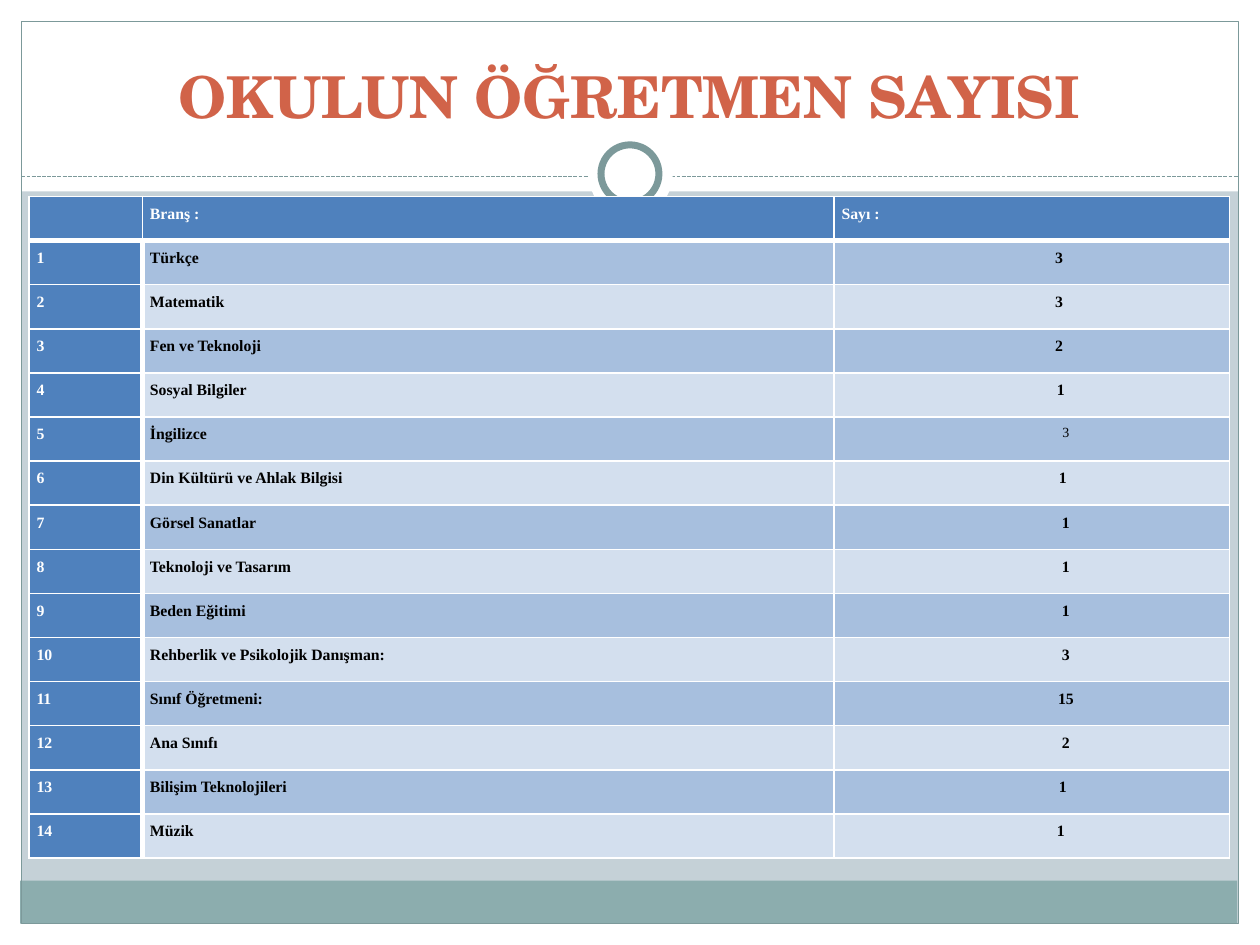
from lxml import etree
from pptx import Presentation
from pptx.dml.color import RGBColor
from pptx.enum.dml import MSO_LINE
from pptx.enum.shapes import MSO_CONNECTOR, MSO_SHAPE
from pptx.enum.text import MSO_ANCHOR, PP_ALIGN
from pptx.oxml.ns import qn
from pptx.util import Inches, Pt

RECT, OVAL = MSO_SHAPE.RECTANGLE, MSO_SHAPE.OVAL
STRAIGHT, DASH = MSO_CONNECTOR.STRAIGHT, MSO_LINE.SQUARE_DOT
LEFT, CENTER = PP_ALIGN.LEFT, PP_ALIGN.CENTER
BOTTOM = MSO_ANCHOR.BOTTOM

COLORS = {
    "back": "C5D1D7", "white": "FFFFFF", "black": "000000", "band": "8CADAE",
    "edge": "7C999A", "title": "D16349", "head": "4F81BD",
    "odd": "A7BFDE", "even": "D3DFEE",
}
STAFF = [
    ("Türkçe", 3, 0.43), ("Matematik", 3, 0.43), ("Fen ve Teknoloji", 2, 0.43),
    ("Sosyal Bilgiler", 1, 0.46), ("İngilizce", 3, 0.54),
    ("Din Kültürü ve Ahlak Bilgisi", 1, 0.49), ("Görsel Sanatlar", 1, 0.54),
    ("Teknoloji ve Tasarım", 1, 0.54), ("Beden Eğitimi", 1, 0.54),
    ("Rehberlik ve Psikolojik Danışman:", 3, 0.54),
    ("Sınıf Öğretmeni:", 15, 0.54), ("Ana Sınıfı", 2, 0.54),
    ("Bilişim Teknolojileri", 1, 0.49), ("Müzik", 1, 0.46),
]
WIDTHS = (0.9, 5.49, 3.14)
HEIGHT = 0.35


def color(name):
    """Return the named colour."""
    return RGBColor.from_string(COLORS[name])


def add_shape(slide, kind, box, fill=None, width=None):
    """Add a preset shape with an optional fill and edge."""
    shape = slide.shapes.add_shape(kind, *map(Inches, box))
    shape.shadow.inherit = False
    if fill:
        shape.fill.solid()
        shape.fill.fore_color.rgb = color(fill)
    else:
        shape.fill.background()
    if width:
        shape.line.color.rgb = color("edge")
        shape.line.width = Pt(width)
    else:
        shape.line.fill.background()


def add_rule(slide, left, right, top):
    """Add the dashed rule under the title."""
    rule = slide.shapes.add_connector(
        STRAIGHT, Inches(left), Inches(top), Inches(right), Inches(top))
    rule.line.color.rgb = color("edge")
    rule.line.width = Pt(0.75)
    rule.line.dash_style = DASH
    etree.SubElement(rule.element.spPr, qn("a:effectLst"))


def add_frame(slide):
    """Draw the margins, the bottom band, the border and the ring."""
    for box in ((0, 7.33, 10, 0.17), (0, 0, 10, 1.52),
                (0, 0, 0.17, 7.5), (9.83, 0, 0.17, 7.5)):
        add_shape(slide, RECT, box, "white")
    add_shape(slide, RECT, (0.16, 6.99, 9.66, 0.34), "band")
    add_shape(slide, RECT, (0.17, 0.17, 9.66, 7.16), width=0.75)
    add_rule(slide, 0.17, 9.83, 1.4)
    add_shape(slide, OVAL, (4.67, 1.05, 0.67, 0.67), "white")
    add_shape(slide, OVAL, (4.77, 1.15, 0.46, 0.46), "white", 4)


def set_font(font, name, size, tone, bold=True):
    """Set the face, size, colour and weight of a font."""
    font.name, font.size, font.bold = name, Pt(size), bold
    font.color.rgb = color(tone)


def set_title(slide, text):
    """Fill the title and lift it above the frame."""
    title = slide.shapes.title
    title.left, title.top = Inches(0.33), Inches(0.25)
    title.width, title.height = Inches(9.33), Inches(0.83)
    title.text_frame.text = text
    title.text_frame.vertical_anchor = BOTTOM
    para = title.text_frame.paragraphs[0]
    para.alignment = CENTER
    set_font(para.font, "TeX Gyre Schola", 33, "title")
    title.element.getparent().append(title.element)


def set_edges(cell, row, col):
    """Draw white cell borders, thick beside the header row and column."""
    thick = {"lnL": row > 0 and col == 1, "lnR": row > 0 and col == 0,
             "lnT": row == 1, "lnB": row == 0}
    props = cell._tc.get_or_add_tcPr()
    for tag, wide in thick.items():
        line = etree.SubElement(props, qn(f"a:{tag}"), w=str(Pt(3 if wide else 1)))
        fill = etree.SubElement(line, qn("a:solidFill"))
        etree.SubElement(fill, qn("a:srgbClr"), val=COLORS["white"])


def set_cell(cell, text, row, col, indent):
    """Style one cell by its place and write its text."""
    head = row == 0 or col == 0
    count = row > 0 and col == 2
    set_edges(cell, row, col)
    cell.fill.solid()
    cell.fill.fore_color.rgb = color("head" if head else "odd" if row % 2 else "even")
    cell.margin_left = cell.margin_right = Inches(0.06)
    cell.margin_top = cell.margin_bottom = 0
    if not text:
        return
    cell.text = text
    para = cell.text_frame.paragraphs[0]
    para.alignment = CENTER if count else LEFT
    para.line_spacing = 1.5
    para.space_before = para.space_after = Pt(3)
    plain = count and row == 5
    set_font(para.font, "Times New Roman", 8 if plain else 9,
             "white" if head else "black", not plain)
    if count:
        para._p.get_or_add_pPr().set("marL", str(Inches(indent)))


def add_staff(slide):
    """Add the table of branches and teacher counts."""
    rows = [("", "Branş :", "Sayı :", 0)]
    rows += [(str(i), name, str(num), gap)
             for i, (name, num, gap) in enumerate(STAFF, 1)]
    table = slide.shapes.add_table(
        len(rows), len(WIDTHS), Inches(0.23), Inches(1.56),
        Inches(sum(WIDTHS)), Inches(HEIGHT * len(rows))).table
    for col, width in zip(table.columns, WIDTHS):
        col.width = Inches(width)
    for r, (*texts, gap) in enumerate(rows):
        for c, text in enumerate(texts):
            set_cell(table.cell(r, c), text, r, c, gap)


def main():
    """Build and save the slide."""
    deck = Presentation()
    deck.slide_width, deck.slide_height = Inches(10), Inches(7.5)
    slide = deck.slides.add_slide(deck.slide_layouts[5])
    slide.background.fill.solid()
    slide.background.fill.fore_color.rgb = color("back")
    add_frame(slide)
    set_title(slide, "OKULUN ÖĞRETMEN SAYISI")
    add_staff(slide)
    deck.save("out.pptx")


if __name__ == "__main__":
    main()
